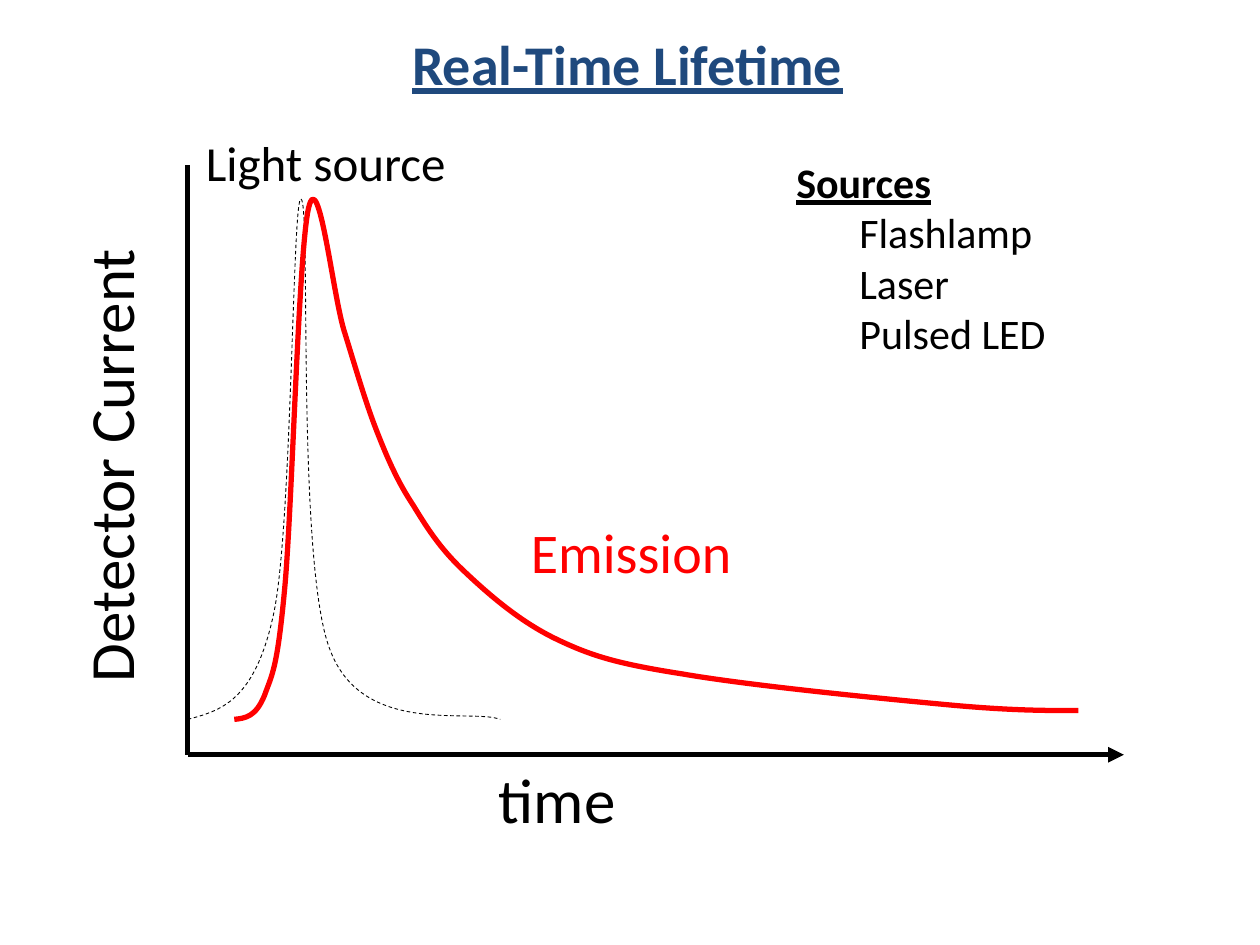
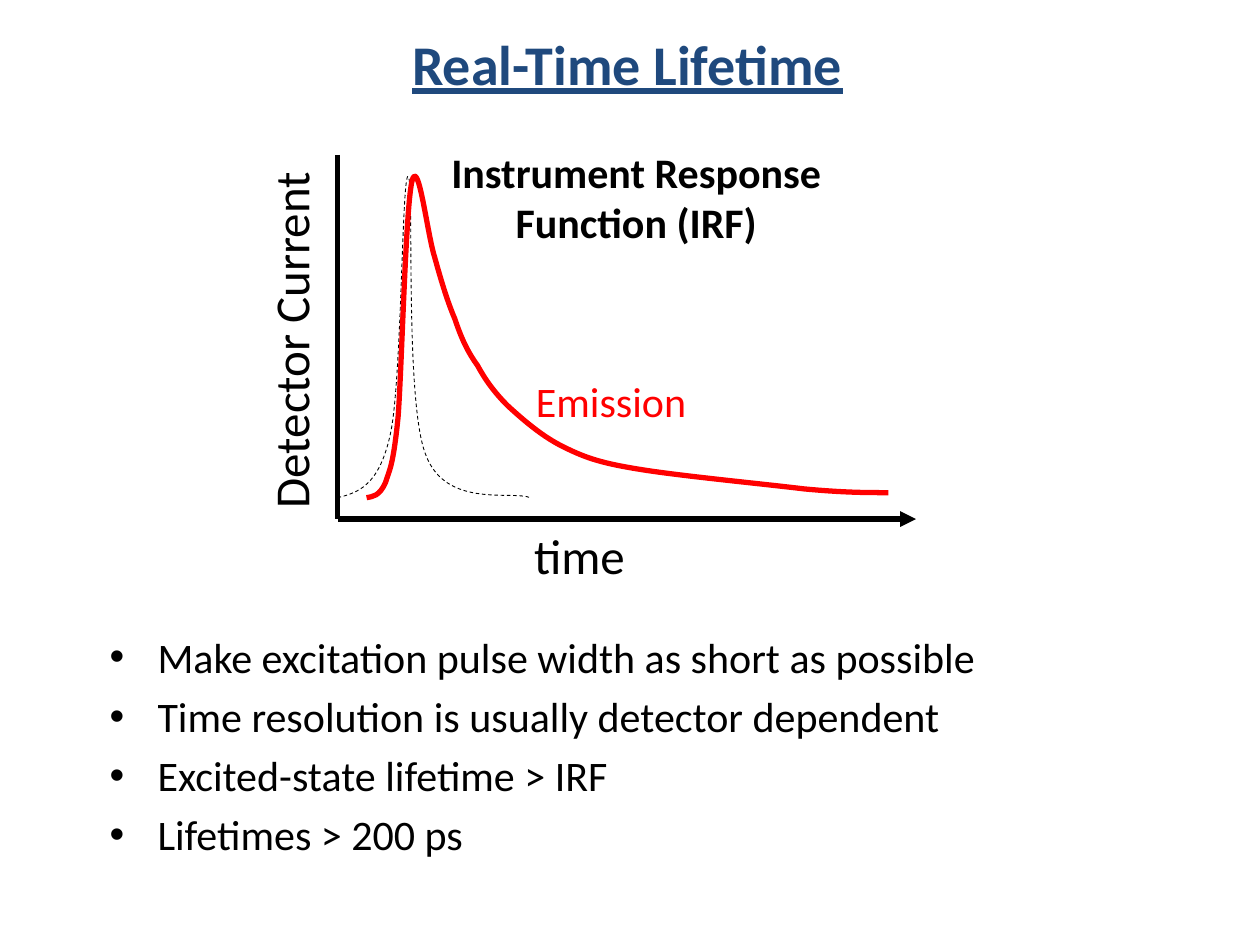
from dataclasses import dataclass

from lxml.etree import SubElement
from pptx import Presentation
from pptx.dml.color import RGBColor
from pptx.enum.dml import MSO_LINE
from pptx.enum.shapes import MSO_CONNECTOR
from pptx.enum.text import MSO_ANCHOR, MSO_AUTO_SIZE, PP_ALIGN
from pptx.oxml.ns import qn
from pptx.util import Pt

PX = 9144
FONT = "Calibri"
COLORS = {"ink": "000000", "title": "1F497D", "glow": "FF0000"}
WIDTH, HEIGHT = 743, 468


@dataclass(frozen=True)
class Box:
    left: int
    top: int
    width: int
    height: int


@dataclass(frozen=True)
class Curve:
    start: tuple
    bends: tuple
    color: str
    weight: float
    dashed: bool = False


@dataclass(frozen=True)
class Label:
    text: str
    box: Box
    large: int
    small: int
    color: str = "ink"
    align: PP_ALIGN = PP_ALIGN.CENTER
    turn: int = 0


@dataclass(frozen=True)
class Plot:
    left: int
    top: int
    ratio: float = 1

    def spot(self, x: int, y: int) -> tuple:
        return (round(self.left + x * self.ratio) * PX,
                round(self.top + y * self.ratio) * PX)


CURVES = (
    Curve((0, 440), (
        (26, 433, 53, 426, 68, 357),
        (83, 289, 83, 22, 90, 27),
        (98, 32, 86, 317, 113, 385),
        (139, 454, 225, 431, 248, 440),
    ), "ink", 0.5, dashed=True),
    Curve((37, 440), (
        (46, 439, 54, 438, 61, 421),
        (67, 404, 71, 401, 77, 336),
        (83, 272, 88, 68, 96, 34),
        (104, 0, 115, 101, 124, 131),
        (133, 160, 141, 188, 150, 211),
        (159, 234, 167, 252, 179, 270),
        (190, 288, 200, 304, 219, 322),
        (238, 340, 263, 362, 292, 376),
        (321, 390, 342, 396, 393, 404),
        (445, 413, 546, 423, 599, 428),
        (651, 433, 679, 433, 707, 433),
    ), "glow", 3),
)
LABELS = (
    Label("Detector Current", Box(-321, 203, 517, 71), 36, 28, turn=270),
    Label("time", Box(237, 468, 275, 71), 36, 28, align=PP_ALIGN.LEFT),
    Label("Emission", Box(227, 275, 250, 64), 32, 24, "glow"),
)


def shade(name: str) -> RGBColor:
    return RGBColor.from_string(COLORS[name])


def write(para, text: str, *, size: int = 24, color: str = "ink",
          bold: bool = False, under: bool = False, align=PP_ALIGN.LEFT,
          after: int = 0) -> None:
    run = para.add_run()
    run.text = text
    run.font.name = FONT
    run.font.size = Pt(size)
    run.font.color.rgb = shade(color)
    run.font.bold = bold
    run.font.underline = under
    para.alignment = align
    para.space_before = Pt(0)
    para.space_after = Pt(after)


def place(shape, box: Box) -> None:
    shape.left, shape.top = box.left * PX, box.top * PX
    shape.width, shape.height = box.width * PX, box.height * PX


def indent(para, margin: int, first: int, mark: str = "") -> None:
    props = para._p.get_or_add_pPr()
    props.set("marL", str(margin * PX))
    props.set("indent", str(first * PX))
    if mark:
        SubElement(props, qn("a:buFont"), typeface="Arial")
        SubElement(props, qn("a:buChar"), char=mark)
    else:
        SubElement(props, qn("a:buNone"))


def label(slide, text: str, box: Box, turn: int = 0, **style) -> None:
    shape = slide.shapes.add_textbox(0, 0, 0, 0)
    place(shape, box)
    shape.rotation = turn
    frame = shape.text_frame
    frame.word_wrap = True
    frame.vertical_anchor = MSO_ANCHOR.MIDDLE if turn else MSO_ANCHOR.TOP
    write(frame.paragraphs[0], text, **style)


def axis(slide, start: tuple, end: tuple, arrow: bool = False) -> None:
    line = slide.shapes.add_connector(MSO_CONNECTOR.STRAIGHT, *start, *end)
    line.line.color.rgb = shade("ink")
    line.line.width = Pt(3)
    if arrow:
        SubElement(line.line._get_or_add_ln(), qn("a:tailEnd"), type="triangle")
    SubElement(line._element.spPr, qn("a:effectLst"))


def trace(slide, plot: Plot, curve: Curve) -> None:
    bends = [[plot.spot(*bend[i:i + 2]) for i in (0, 2, 4)]
             for bend in curve.bends]
    pen = slide.shapes.build_freeform(*plot.spot(*curve.start))
    pen.add_line_segments([bend[-1] for bend in bends], close=False)
    shape = pen.convert_to_shape()
    steps = list(shape._element.iter(qn("a:lnTo")))
    for step, bend in zip(steps, bends):
        route = step.getparent()
        cubic = SubElement(route, qn("a:cubicBezTo"))
        for x, y in bend:
            SubElement(cubic, qn("a:pt"), x=str(x - shape.left),
                       y=str(y - shape.top))
        route.replace(step, cubic)
    shape.shadow.inherit = False
    shape.fill.background()
    shape.line.color.rgb = shade(curve.color)
    shape.line.width = Pt(curve.weight)
    if curve.dashed:
        shape.line.dash_style = MSO_LINE.DASH


def graph(slide, plot: Plot) -> None:
    corner = plot.spot(0, HEIGHT)
    axis(slide, plot.spot(0, 0), corner)
    axis(slide, corner, plot.spot(WIDTH, HEIGHT), arrow=True)
    for curve in CURVES:
        trace(slide, plot, curve)
    for item in LABELS:
        x, y = plot.spot(item.box.left, item.box.top)
        box = Box(x // PX, y // PX, round(item.box.width * plot.ratio),
                  round(item.box.height * plot.ratio))
        label(slide, item.text, box, item.turn, color=item.color,
              size=item.large if plot.ratio == 1 else item.small,
              align=item.align)


def begin(deck, box: Box) -> tuple:
    slide = deck.slides.add_slide(deck.slide_layouts[1])
    title, body = slide.placeholders
    place(title, Box(48, 0, 900, 100))
    title.text_frame.vertical_anchor = MSO_ANCHOR.MIDDLE
    write(title.text_frame.paragraphs[0], "Real-Time Lifetime", size=32,
          color="title", bold=True, under=True, align=PP_ALIGN.CENTER)
    place(body, box)
    body.text_frame.auto_size = MSO_AUTO_SIZE.NONE
    return slide, body.text_frame


def sources(deck) -> None:
    slide, frame = begin(deck, Box(622, 119, 265, 212))
    head = frame.paragraphs[0]
    write(head, "Sources", bold=True, under=True)
    indent(head, 0, 0)
    for text in ("Flashlamp", "Laser", "Pulsed LED"):
        para = frame.add_paragraph()
        write(para, text)
        indent(para, 50, 0)
    label(slide, "Light source", Box(122, 100, 273, 57), size=28,
          align=PP_ALIGN.CENTER)
    graph(slide, Plot(149, 131))


def response(deck) -> None:
    slide, frame = begin(deck, Box(77, 496, 889, 193))
    points = (
        "Make excitation pulse width as short as possible",
        "Time resolution is usually detector dependent",
        "Excited-state lifetime > IRF",
        "Lifetimes > 200 ps",
    )
    for i, text in enumerate(points):
        para = frame.add_paragraph() if i else frame.paragraphs[0]
        write(para, text, after=5)
        indent(para, 38, -38, "•")
    label(slide, "Instrument Response Function (IRF)", Box(295, 111, 420, 91),
          bold=True, align=PP_ALIGN.CENTER)
    graph(slide, Plot(268, 123, 0.618))


def main() -> None:
    deck = Presentation()
    deck.slide_width, deck.slide_height = 1000 * PX, 750 * PX
    sources(deck)
    response(deck)
    deck.save("out.pptx")


if __name__ == "__main__":
    main()
